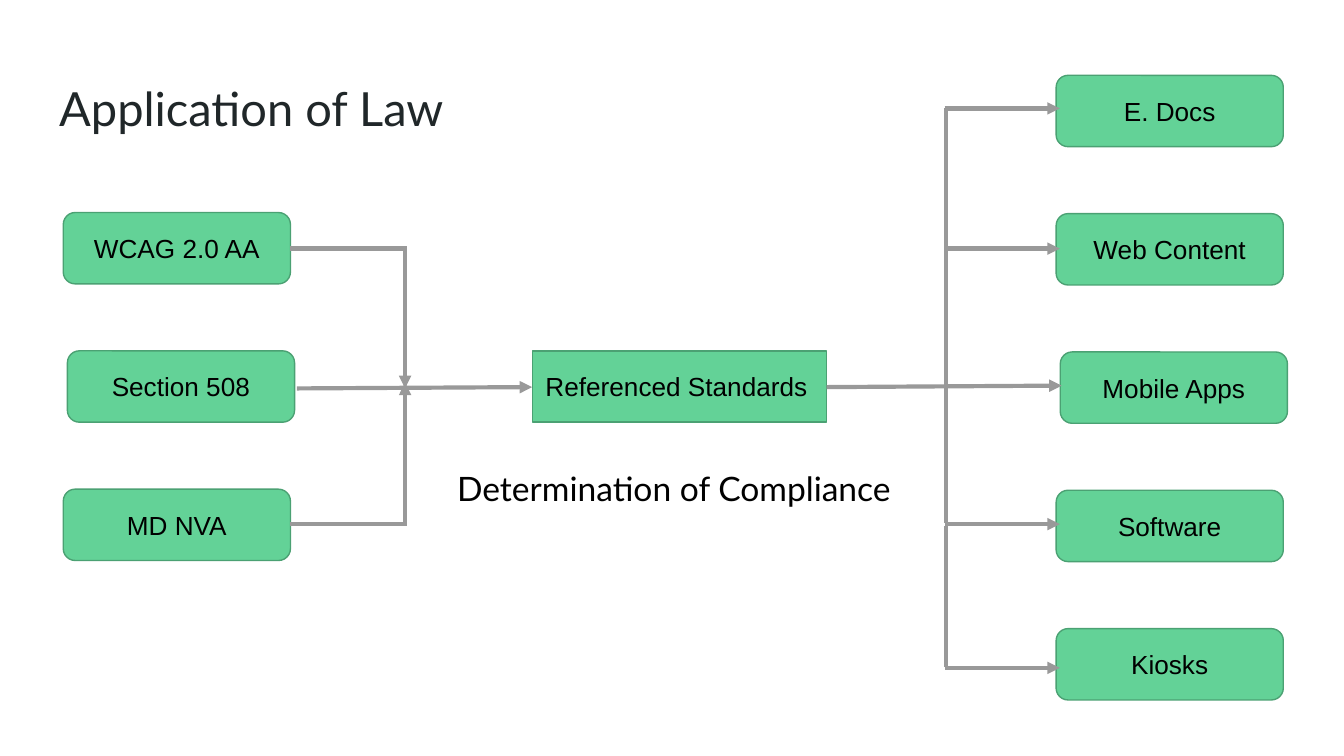
from lxml import etree
from pptx import Presentation
from pptx.dml.color import RGBColor
from pptx.enum import shapes, text
from pptx.oxml import ns
from pptx.util import Pt

GREEN, EDGE, GREY, BLACK, INK = "63D297", "4BA173", "999999", "000000", "202729"
BOX_WIDTH, BOX_HEIGHT, ROW_STEP = 121.7, 38.2, 74.1
MIDDLE_SHIFT = 2.2  # the middle box of each column sits slightly to the right


def colour(value):
    return RGBColor.from_string(value)


def write(frame, words, size, font, ink, align, anchor):
    frame.word_wrap = True
    frame.vertical_anchor = anchor
    frame.margin_left = frame.margin_right = Pt(7.2)
    frame.margin_top = frame.margin_bottom = Pt(7.2)
    para = frame.paragraphs[0]
    para.alignment = align
    span = para.add_run()
    span.text = words
    span.font.size = Pt(size)
    span.font.name = font
    span.font.color.rgb = colour(ink)


def add_box(page, kind, bounds, words, align=text.PP_ALIGN.CENTER):
    box = page.shapes.add_shape(kind, *map(Pt, bounds))
    box.shadow.inherit = False
    box.fill.solid()
    box.fill.fore_color.rgb = colour(GREEN)
    box.line.color.rgb = colour(EDGE)
    box.line.width = Pt(0.75)
    write(box.text_frame, words, 14, "Arial", BLACK, align, text.MSO_ANCHOR.MIDDLE)


def add_line(page, start, end, arrow=False):
    line = page.shapes.add_connector(
        shapes.MSO_CONNECTOR.STRAIGHT, *map(Pt, (*start, *end)))
    line.line.color.rgb = colour(GREY)
    line.line.width = Pt(2.25)
    properties = line._element.spPr
    if arrow:
        outline = properties.find(ns.qn("a:ln"))
        etree.SubElement(outline, ns.qn("a:tailEnd"), type="triangle")
    etree.SubElement(properties, ns.qn("a:effectLst"))


def add_column(page, left, top, labels):
    for row, label in enumerate(labels):
        shift = MIDDLE_SHIFT if row == len(labels) // 2 else 0
        bounds = (left + shift, top + row * ROW_STEP, BOX_WIDTH, BOX_HEIGHT)
        add_box(page, shapes.MSO_SHAPE.FLOWCHART_ALTERNATE_PROCESS, bounds, label)


def add_title(page, left, top, width, height):
    title = page.shapes.title
    title.left, title.top, title.width, title.height = map(
        Pt, (left, top, width, height))
    write(title.text_frame, "Application of Law", 25.2, "Lato", INK,
          text.PP_ALIGN.LEFT, text.MSO_ANCHOR.TOP)


def add_sources(page, left, top):
    add_column(page, left, top, ["WCAG 2.0 AA", "Section 508", "MD NVA"])
    # Middle source runs straight on; the outer two bend into it
    add_line(page, (159, 208.1), (285.1, 207.4), arrow=True)
    join = left + 183.1
    for branch_y, join_y in ((133.2, 208), (280.6, 205)):
        add_line(page, (left + BOX_WIDTH, branch_y), (join + 1, branch_y))
        add_line(page, (join, branch_y), (join, join_y), arrow=True)


def add_centre(page, left, top, width, height):
    add_box(page, shapes.MSO_SHAPE.FLOWCHART_PROCESS, (left, top, width, height),
            "Referenced Standards", text.PP_ALIGN.LEFT)
    caption = page.shapes.add_textbox(*map(Pt, (left - 47.3, top + 55.5, 260, 36)))
    write(caption.text_frame, "Determination of Compliance", 18, "Lato", BLACK,
          text.PP_ALIGN.LEFT, text.MSO_ANCHOR.TOP)


def add_targets(page, left, top):
    add_column(page, left, top, ["E. Docs", "Web Content", "Mobile Apps",
                                 "Software", "Kiosks"])
    # Arrows from the spine to the outer boxes, and from the centre
    spine = left - 59
    for branch_y in (58.1, 133.2, 280.8, 357.8):
        add_line(page, (spine - 0.8, branch_y), (left + 2, branch_y), arrow=True)
    add_line(page, (442.9, 207.4), (left + 3, 206.6), arrow=True)
    # Spine, in pieces
    for start_y, end_y in ((58.1, 133.2), (133.2, 208), (280.1, 205), (357.1, 282)):
        add_line(page, (spine, start_y), (spine, end_y))


def main():
    deck = Presentation()
    deck.slide_width, deck.slide_height = Pt(720), Pt(405)
    page = deck.slides.add_slide(deck.slide_layouts[5])
    add_title(page, 24.5, 35.3, 671, 45.4)
    add_sources(page, 33.9, 113.9)
    add_centre(page, 285.1, 188, 157.8, BOX_HEIGHT)
    add_targets(page, 565.8, 40.4)
    deck.save("out.pptx")


if __name__ == "__main__":
    main()
